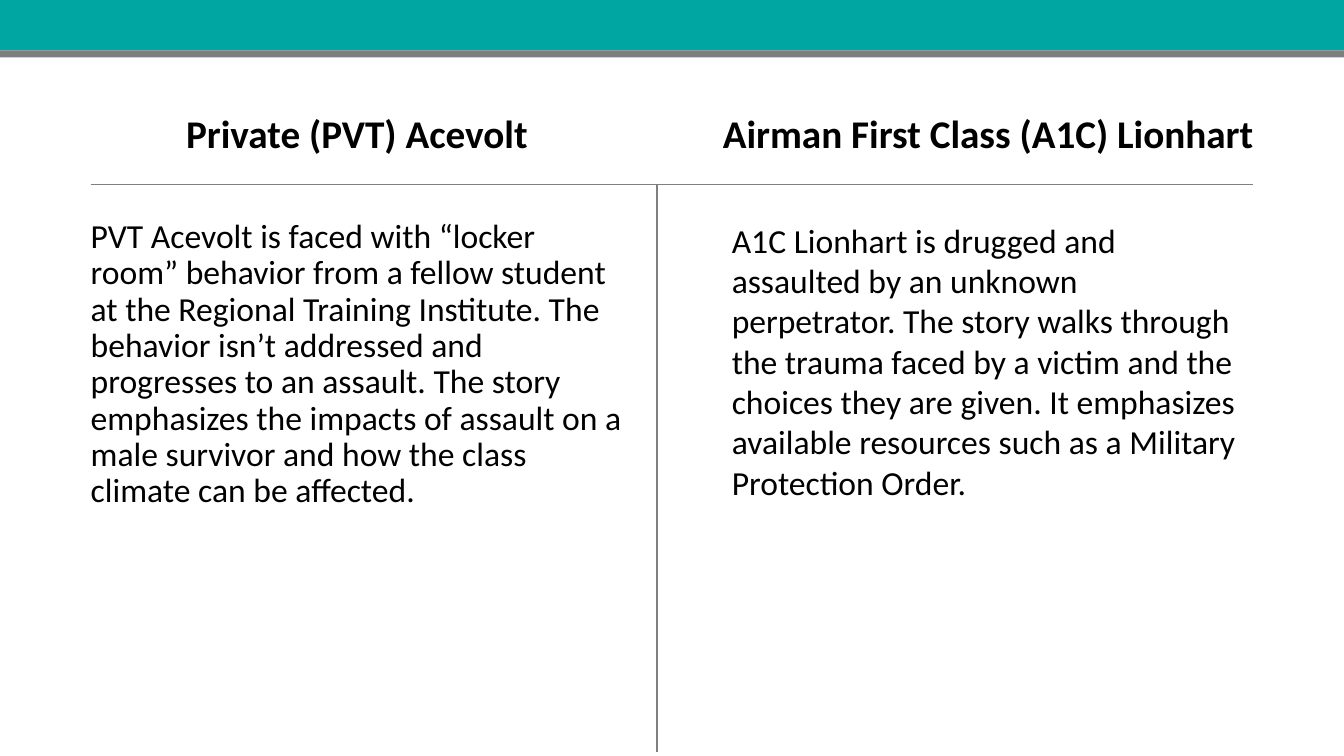
from dataclasses import dataclass

from lxml import etree
from pptx import Presentation
from pptx import util as u
from pptx.dml.color import RGBColor
from pptx.enum import shapes, text
from pptx.oxml import ns

SCALE = 9144  # EMU per px, 100 px to the inch
WIDE, HIGH = 1333, 750
FONT = "Calibri"
COLORS = {"teal": "00A6A2", "gray": "7F7F7F", "black": "000000"}


@dataclass
class Band:
    top: int
    height: int
    color: str


@dataclass
class Label:
    left: int
    top: int
    width: int
    height: int
    words: str
    size: int = 24
    head: bool = False
    inset: int = 10
    lead: float = 1.0


@dataclass
class Rule:
    start: tuple[int, int]
    end: tuple[int, int]
    weight: float


BANDS = [Band(0, 50, "teal"), Band(50, 7, "gray")]

LABELS = [
    Label(90, 213, 527, 473,
          "PVT Acevolt is faced with “locker room” behavior from a fellow "
          "student at the Regional Training Institute. The behavior isn’t "
          "addressed and progresses to an assault. The story emphasizes the "
          "impacts of assault on a male survivor and how the class climate "
          "can be affected.", inset=0, lead=0.9),
    Label(716, 213, 527, 293,
          "A1C Lionhart is drugged and assaulted by an unknown perpetrator. "
          "The story walks through the trauma faced by a victim and the "
          "choices they are given. It emphasizes available resources such as "
          "a Military Protection Order."),
    Label(698, 103, 564, 57, "Airman First Class (A1C) Lionhart", 28, True),
    Label(126, 103, 456, 57, "Private (PVT) Acevolt", 28, True),
]

RULES = [
    Rule((90, 183), (1243, 183), 1),
    Rule((652, 183), (652, 746), 1.25),
]


def px(count: int) -> u.Emu:
    return u.Emu(count * SCALE)


def color(name: str) -> RGBColor:
    return RGBColor.from_string(COLORS[name])


def draw_band(slide, band: Band) -> None:
    bar = slide.shapes.add_shape(shapes.MSO_SHAPE.RECTANGLE, 0, px(band.top),
                                 px(WIDE), px(band.height))
    bar.shadow.inherit = False
    bar.fill.solid()
    bar.fill.fore_color.rgb = color(band.color)
    bar.line.fill.background()


def draw_label(slide, label: Label) -> None:
    box = slide.shapes.add_textbox(px(label.left), px(label.top),
                                   px(label.width), px(label.height))
    frame = box.text_frame
    frame.word_wrap = True
    frame.margin_left = frame.margin_right = px(label.inset)
    frame.margin_top = frame.margin_bottom = px(5)
    para = frame.paragraphs[0]
    para.text = label.words
    para.line_spacing = label.lead
    para.font.name = FONT
    para.font.size = u.Pt(label.size)
    para.font.bold = label.head
    para.font.color.rgb = color("black")
    if label.head:
        frame.vertical_anchor = text.MSO_ANCHOR.MIDDLE
        para.alignment = text.PP_ALIGN.CENTER


def draw_rule(slide, rule: Rule) -> None:
    line = slide.shapes.add_connector(shapes.MSO_CONNECTOR.STRAIGHT,
                                      *map(px, rule.start + rule.end))
    line.line.color.rgb = color("gray")
    line.line.width = u.Pt(rule.weight)
    etree.SubElement(line._element.spPr, ns.qn("a:effectLst"))


def main() -> None:
    deck = Presentation()
    deck.slide_width, deck.slide_height = px(WIDE), px(HIGH)
    slide = deck.slides.add_slide(deck.slide_layouts[6])
    for band in BANDS:
        draw_band(slide, band)
    for label in LABELS:
        draw_label(slide, label)
    for rule in RULES:
        draw_rule(slide, rule)
    deck.save("out.pptx")


if __name__ == "__main__":
    main()
